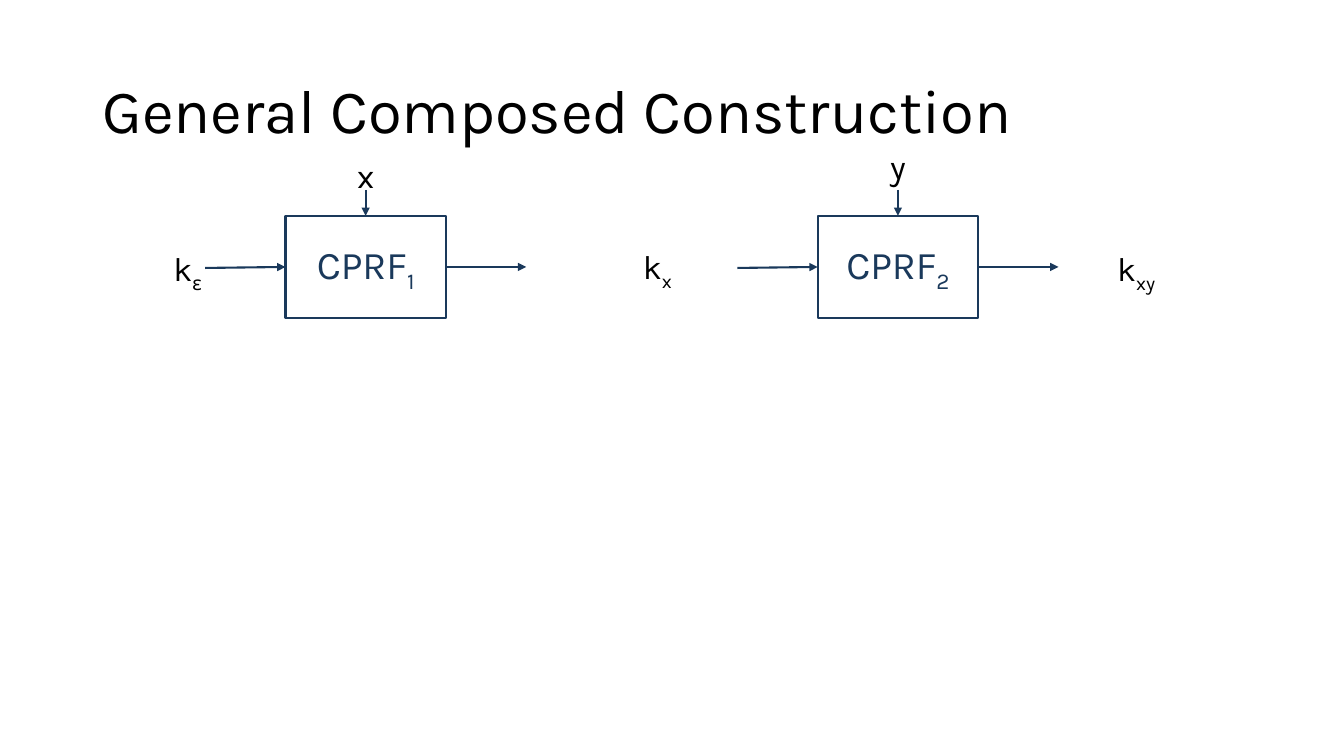
from dataclasses import dataclass

from pptx import Presentation
from pptx.dml.color import RGBColor
from pptx.enum.shapes import MSO_CONNECTOR, MSO_SHAPE
from pptx.enum.text import MSO_ANCHOR, MSO_AUTO_SIZE, PP_ALIGN
from pptx.oxml.ns import qn
from pptx.util import Pt
from lxml.etree import SubElement


@dataclass(frozen=True)
class Theme:
    font: str = "Karla"
    black: RGBColor = RGBColor(0x00, 0x00, 0x00)
    navy: RGBColor = RGBColor(0x1A, 0x39, 0x5B)
    title: float = 44
    block: float = 28
    label: float = 24
    line: float = 1.5


THEME = Theme()
BLOCK_W, BLOCK_H = 114.6, 73
ARROW_W, ARROW_H = 57.4, 18.5
LABEL_W, LABEL_H = 76.3, 36.35


def write(tf, text, sub="", size=THEME.label, color=THEME.black,
          align=PP_ALIGN.CENTER, anchor=MSO_ANCHOR.TOP, spacing=None):
    """Write text, with an optional subscript, into a text frame."""
    tf.word_wrap = True
    tf.vertical_anchor = anchor
    p = tf.paragraphs[0]
    p.alignment = align
    if spacing:
        p.line_spacing = spacing
    for part, baseline in ((text, None), (sub, "-25000")):
        if not part:
            continue
        r = p.add_run()
        r.text = part
        r.font.name = THEME.font
        r.font.size = Pt(size)
        r.font.color.rgb = color
        if baseline:
            r.font._element.set("baseline", baseline)


def add_title(s, text, x, y, w, h):
    sp = s.shapes.title
    sp.left, sp.top, sp.width, sp.height = Pt(x), Pt(y), Pt(w), Pt(h)
    sp.text_frame.auto_size = MSO_AUTO_SIZE.NONE
    write(sp.text_frame, text, size=THEME.title, align=PP_ALIGN.LEFT,
          anchor=MSO_ANCHOR.MIDDLE, spacing=0.9)


def add_arrow(shapes, x1, y1, x2, y2):
    """Draw an arrow that points at its second end."""
    c = shapes.add_connector(MSO_CONNECTOR.STRAIGHT, Pt(x1), Pt(y1), Pt(x2), Pt(y2))
    c.line.color.rgb = THEME.navy
    c.line.width = Pt(THEME.line)
    SubElement(c.line._get_or_add_ln(), qn("a:tailEnd"), type="triangle")
    SubElement(c._element.spPr, qn("a:effectLst"))


def add_block(s, name, sub, x, y, w=BLOCK_W, h=BLOCK_H):
    """Draw a function block with two inputs and one output."""
    shapes = s.shapes.add_group_shape().shapes
    sp = shapes.add_shape(MSO_SHAPE.RECTANGLE, Pt(x), Pt(y), Pt(w), Pt(h))
    sp.shadow.inherit = False
    sp.fill.background()
    sp.line.color.rgb = THEME.navy
    sp.line.width = Pt(THEME.line)
    write(sp.text_frame, name, sub, size=THEME.block, color=THEME.navy,
          anchor=MSO_ANCHOR.MIDDLE)
    mid_x, mid_y = x + w / 2, y + h / 2
    add_arrow(shapes, x - ARROW_W, mid_y + 0.7, x, mid_y)
    add_arrow(shapes, mid_x, y - ARROW_H, mid_x, y)
    add_arrow(shapes, x + w, mid_y, x + w + ARROW_W, mid_y)


def add_label(s, text, sub, x, y, w=LABEL_W, h=LABEL_H):
    tf = s.shapes.add_textbox(Pt(x), Pt(y), Pt(w), Pt(h)).text_frame
    write(tf, text, sub)
    tf.auto_size = MSO_AUTO_SIZE.SHAPE_TO_FIT_TEXT


def add_chain(s, x, y, pitch):
    """Place the two blocks, their inputs and the keys around them."""
    # Blocks and arrows
    for i in range(2):
        add_block(s, "CPRF", str(i + 1), x + i * pitch, y)
    # Inputs above the blocks
    center = (BLOCK_W - LABEL_W) / 2
    for i, (text, rise) in enumerate((("x", 46.8), ("y", 53.3))):
        add_label(s, text, "", x + i * pitch + center, y - rise)
    # Keys before, between and after the blocks
    for sub, dx, dy in (("ε", -108, 19.5), ("x", 227.5, 18), ("xy", 569.5, 19.5)):
        add_label(s, "k", sub, x + dx, y + dy)


def main():
    prs = Presentation()
    prs.slide_width, prs.slide_height = Pt(960), Pt(540)
    s = prs.slides.add_slide(prs.slide_layouts[5])
    add_title(s, "General Composed Construction", 66, 28.75, 828, 104.4)
    add_chain(s, x=203.9, y=154.2, pitch=380.2)
    prs.save("out.pptx")


if __name__ == "__main__":
    main()
